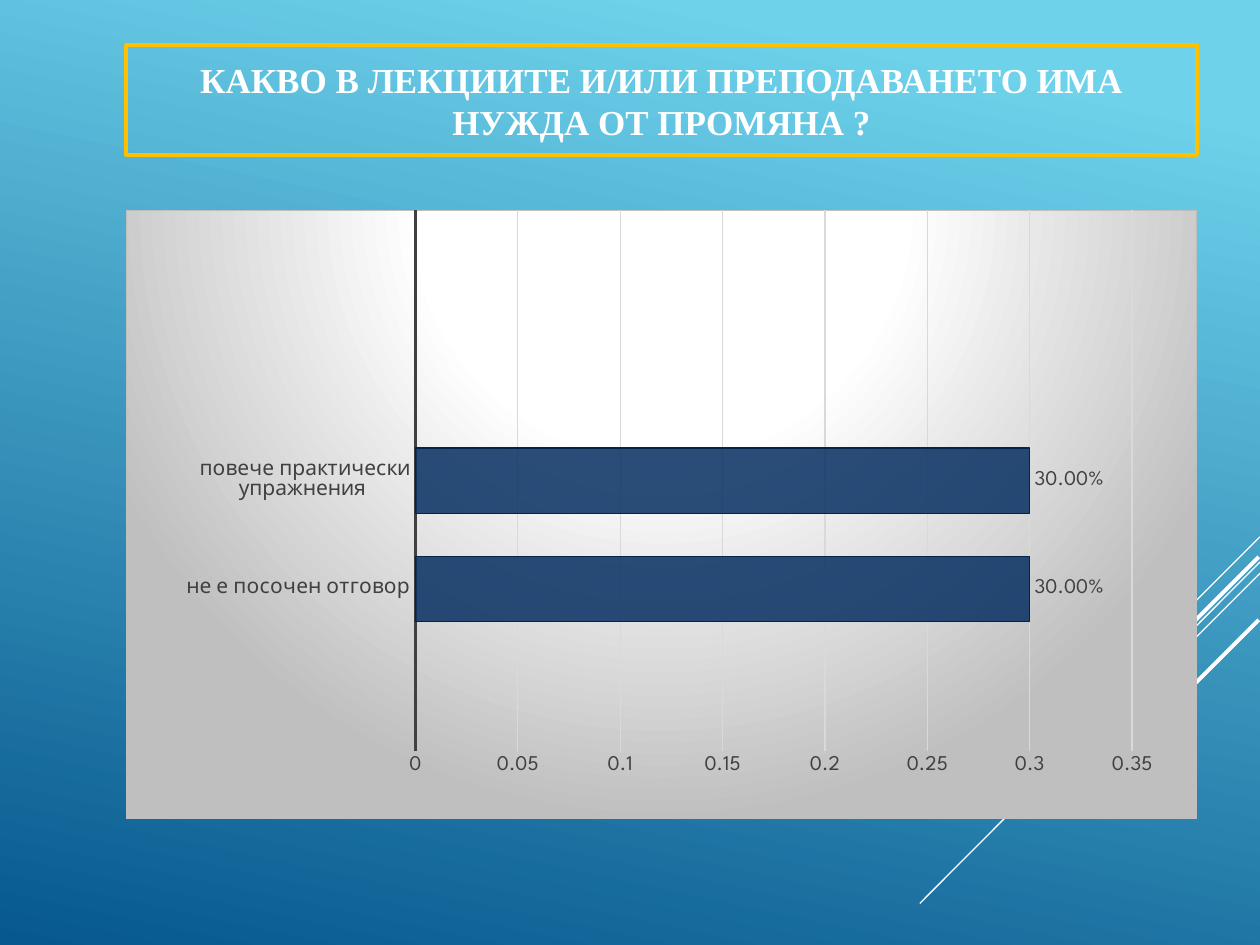
import pptx
import pptx.chart.data
import pptx.dml.color
import pptx.enum.chart
import pptx.enum.shapes
import pptx.enum.text
import pptx.oxml
import pptx.oxml.ns
import pptx.util
from pptx.util import Inches, Pt

HUES = {
    "sky": "6ED2EB", "deep": "06588E", "white": "FFFFFF", "gold": "FFC000",
    "text": "404040", "grid": "D9D9D9", "gray": "BFBFBF",
    "bar": "052F61", "edge": "042349",
}
FONT = "League Spartan"
RAYS = [  # start, end, width in points
    ((10, 4.26), (9.17, 5.09), 0.75),
    ((10, 4.46), (7.3, 7.17), 0.75),
    ((10, 4.55), (8.28, 6.27), 0.75),
    ((9.99, 4.42), (8.42, 5.99), 2.25),
    ((9.99, 4.92), (8.85, 6.06), 2.25),
]
CATS = ["", "не е посочен отговор", "повече практически упражнения ", "", ""]
VALS = [None, 0.3, 0.3, None, None]
NS = pptx.oxml.ns.nsdecls("a", "c")


def hue(name):
    return pptx.dml.color.RGBColor.from_string(HUES[name])


def set_line(line, name, width):
    line.color.rgb = hue(name)
    line.width = Pt(width)


def set_font(font, name, size, face=FONT):
    font.name = face
    font.size = Pt(size)
    font.color.rgb = hue(name)


def add_back(slide):
    fill = slide.background.fill
    fill.gradient()
    fill.gradient_angle = 360 - 102
    for stop, name, pos in zip(fill.gradient_stops, ("sky", "deep"), (0.1, 1)):
        stop.color.rgb = hue(name)
        stop.position = pos


def add_ray(slide, start, end, width):
    ray = slide.shapes.add_connector(
        pptx.enum.shapes.MSO_CONNECTOR.STRAIGHT,
        *[Inches(n) for n in start + end])
    set_line(ray.line, "white", width)
    ray.line._get_or_add_ln().getparent().append(
        pptx.oxml.parse_xml(f"<a:effectLst {NS}/>"))


def add_title(slide, text):
    title = slide.shapes.title
    title.left, title.top = Inches(1), Inches(0.36)
    title.width, title.height = Inches(8.5), Inches(0.87)
    set_line(title.line, "gold", 2.25)
    frame = title.text_frame
    frame.text = text
    frame.word_wrap = True
    frame.auto_size = pptx.enum.text.MSO_AUTO_SIZE.NONE
    frame.vertical_anchor = pptx.enum.text.MSO_ANCHOR.MIDDLE
    para = frame.paragraphs[0]
    para.alignment = pptx.enum.text.PP_ALIGN.CENTER
    para.space_before = Pt(5.8)
    para.line_spacing = 1
    set_font(para.font, "white", 20, "Times New Roman")
    para.font.bold = True


def set_axis(axis):
    set_font(axis.tick_labels.font, "text", 12)
    axis.major_tick_mark = pptx.enum.chart.XL_TICK_MARK.NONE
    axis.minor_tick_mark = pptx.enum.chart.XL_TICK_MARK.NONE


def set_axes(chart):
    cat, val = chart.category_axis, chart.value_axis
    set_axis(cat)
    set_axis(val)
    cat.has_major_gridlines = False
    set_line(cat.format.line, "text", 1.5)
    val.format.line.fill.background()
    val.minimum_scale, val.maximum_scale, val.major_unit = 0, 0.35, 0.05
    val.has_major_gridlines = True
    set_line(val.major_gridlines.format.line, "grid", 0.75)
    val.tick_labels.number_format = "General"
    val.tick_labels.number_format_is_linked = False


def set_bars(plot):
    plot.gap_width = 65
    plot.vary_by_categories = False
    bars = plot.series[0]
    bars.format.fill.solid()
    bars.format.fill.fore_color.rgb = hue("bar")
    shade = bars._element.find(".//" + pptx.oxml.ns.qn("a:srgbClr"))
    shade.append(pptx.oxml.parse_xml(f'<a:alpha {NS} val="85000"/>'))
    set_line(bars.format.line, "edge", 0.75)
    labels = bars.data_labels
    labels.show_value = True
    labels.number_format = "0.00%"
    labels.number_format_is_linked = False
    labels.position = pptx.enum.chart.XL_LABEL_POSITION.OUTSIDE_END
    set_font(labels.font, "text", 12)


def set_plot_area(chart, x, y, w, h):
    area = chart._chartSpace.chart.plotArea
    for old in area.findall(pptx.oxml.ns.qn("c:layout")):
        area.remove(old)
    sizes = "".join(f'<c:{k} val="{v}"/>' for k, v in zip("xywh", (x, y, w, h)))
    area.insert(0, pptx.oxml.parse_xml(
        f'<c:layout {NS}><c:manualLayout><c:layoutTarget val="inner"/>'
        f'<c:xMode val="edge"/><c:yMode val="edge"/>{sizes}'
        '</c:manualLayout></c:layout>'))


def set_glow(chart):
    """Fill the chart with a radial gradient and give it a thin border."""
    stops = "".join(
        f'<a:gs pos="{pos}000"><a:srgbClr val="{HUES[name]}"/></a:gs>'
        for pos, name in ((0, "white"), (39, "white"), (100, "gray")))
    chart._chartSpace.find(pptx.oxml.ns.qn("c:txPr")).addprevious(
        pptx.oxml.parse_xml(
            f'<c:spPr {NS}><a:gradFill><a:gsLst>{stops}</a:gsLst>'
            '<a:path path="circle"><a:fillToRect l="50000" t="-80000" '
            'r="50000" b="180000"/></a:path></a:gradFill>'
            f'<a:ln w="{Pt(0.75)}"><a:solidFill><a:srgbClr '
            f'val="{HUES["gray"]}"/></a:solidFill></a:ln></c:spPr>'))


def add_chart(slide):
    data = pptx.chart.data.CategoryChartData()
    data.categories = CATS
    data.add_series("Series 1", VALS)
    chart = slide.shapes.add_chart(
        pptx.enum.chart.XL_CHART_TYPE.BAR_CLUSTERED, Inches(1), Inches(1.66),
        Inches(8.5), Inches(4.84), data).chart
    chart.has_title = chart.has_legend = False
    set_font(chart.font, "white", 10)
    set_axes(chart)
    set_bars(chart.plots[0])
    set_plot_area(chart, 0.27, 0, 0.67, 0.89)
    set_glow(chart)


def main():
    deck = pptx.Presentation()
    deck.slide_width, deck.slide_height = Inches(10), Inches(7.5)
    slide = deck.slides.add_slide(deck.slide_layouts[5])
    add_back(slide)
    for ray in RAYS:
        add_ray(slide, *ray)
    add_title(slide, "КАКВО В ЛЕКЦИИТЕ И/ИЛИ ПРЕПОДАВАНЕТО ИМА НУЖДА ОТ ПРОМЯНА ?")
    add_chart(slide)
    deck.save("out.pptx")


if __name__ == "__main__":
    main()
